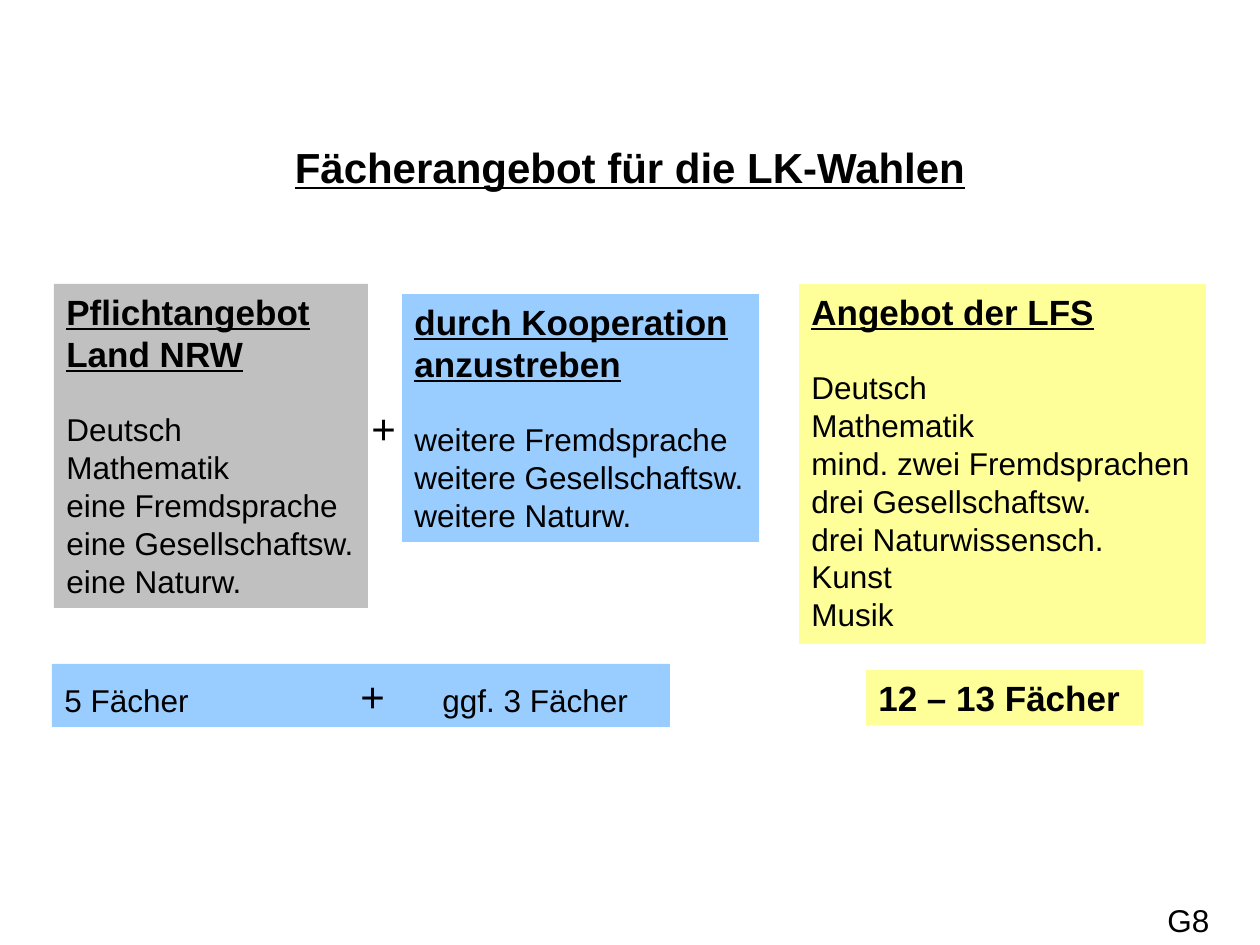
import pptx
import pptx.util
from lxml import etree
from pptx.dml.color import RGBColor
from pptx.enum.shapes import MSO_SHAPE
from pptx.enum.text import MSO_ANCHOR, MSO_AUTO_SIZE, PP_ALIGN
from pptx.oxml.ns import qn

BLACK = RGBColor(0x00, 0x00, 0x00)
GRAY = RGBColor(0xC0, 0xC0, 0xC0)
BLUE = RGBColor(0x99, 0xCC, 0xFF)
YELLOW = RGBColor(0xFF, 0xFF, 0x99)
FONT = "Arial"


def px(n):
    return pptx.util.Emu(round(n * 914400 / 126))


def style(font, size, bold=False, underline=False):
    font.name = FONT
    font.size = pptx.util.Pt(size)
    font.bold = bold
    font.underline = underline
    font.color.rgb = BLACK


def place(sp, box):
    sp.left, sp.top, sp.width, sp.height = (px(n) for n in box)


def add_title(s, text, box):
    sp = s.shapes.title
    place(sp, box)
    tf = sp.text_frame
    tf.text = text
    tf.word_wrap = False
    tf.auto_size = MSO_AUTO_SIZE.NONE
    tf.vertical_anchor = MSO_ANCHOR.TOP
    p = tf.paragraphs[0]
    p.alignment = PP_ALIGN.CENTER
    style(p.font, 24, True, True)


def add_label(s, text, box, size):
    tf = s.shapes.add_textbox(*(px(n) for n in box)).text_frame
    tf.word_wrap = False
    p = tf.paragraphs[0]
    p.text = text
    style(p.font, size)


def add_panel(s, box, color, wrap=False):
    """Add a plain filled rectangle and return its text frame."""
    sp = s.shapes.add_shape(MSO_SHAPE.RECTANGLE, *(px(n) for n in box))
    sp.shadow.inherit = False
    sp.fill.solid()
    sp.fill.fore_color.rgb = color
    sp.line.fill.background()
    tf = sp.text_frame
    tf.word_wrap = wrap
    tf.vertical_anchor = MSO_ANCHOR.TOP
    tf.paragraphs[0].alignment = PP_ALIGN.LEFT
    return tf


def add_subject_list(s, box, color, heading, subjects, wrap=False):
    tf = add_panel(s, box, color, wrap)
    tf.text = "\n".join(heading + subjects)
    for i, p in enumerate(tf.paragraphs):
        p.alignment = PP_ALIGN.LEFT
        is_heading = i < len(heading)
        style(p.font, 20 if is_heading else 18, is_heading, is_heading)
    tf.paragraphs[len(heading)].space_before = pptx.util.Pt(20.7)


def add_sum(s, box, color, parts, tabs):
    """Add a panel with one line of (text, size) parts set on tab stops."""
    p = add_panel(s, box, color, wrap=True).paragraphs[0]
    tab_list = etree.SubElement(p._p.get_or_add_pPr(), qn("a:tabLst"))
    for n in tabs:
        etree.SubElement(tab_list, qn("a:tab"), pos=str(px(n)), algn="l")
    for text, size in parts:
        r = p.add_run()
        r.text = text
        style(r.font, size)


def add_total(s, box, color, text):
    p = add_panel(s, box, color, wrap=True).paragraphs[0]
    p.text = text
    style(p.font, 20, True)


def main():
    prs = pptx.Presentation()
    prs.slide_width, prs.slide_height = px(1260), px(945)
    s = prs.slides.add_slide(prs.slide_layouts[5])

    add_label(s, "G8", (1155, 895, 67, 50), 18)
    add_title(s, "Fächerangebot für die LK-Wahlen", (282, 135, 696, 63))
    add_subject_list(
        s, (54, 284, 314, 324), GRAY, ["Pflichtangebot", "Land NRW"],
        ["Deutsch", "Mathematik", "eine Fremdsprache",
         "eine Gesellschaftsw.", "eine Naturw."])
    add_subject_list(
        s, (402, 294, 357, 248), BLUE, ["durch Kooperation", "anzustreben"],
        ["weitere Fremdsprache", "weitere Gesellschaftsw.",
         "weitere Naturw."], wrap=True)
    add_subject_list(
        s, (799, 284, 407, 360), YELLOW, ["Angebot der LFS"],
        ["Deutsch", "Mathematik", "mind. zwei Fremdsprachen",
         "drei Gesellschaftsw.", "drei Naturwissensch.", "Kunst", "Musik"])
    add_label(s, "+", (359, 396, 50, 63), 24)
    add_sum(s, (52, 664, 618, 63), BLUE,
            [("5 Fächer\t", 18), ("+", 24), ("\tggf. 3 Fächer", 18)],
            tabs=(296, 378))
    add_total(s, (866, 670, 277, 55), YELLOW, "12 – 13 Fächer")
    prs.save("out.pptx")


if __name__ == "__main__":
    main()
